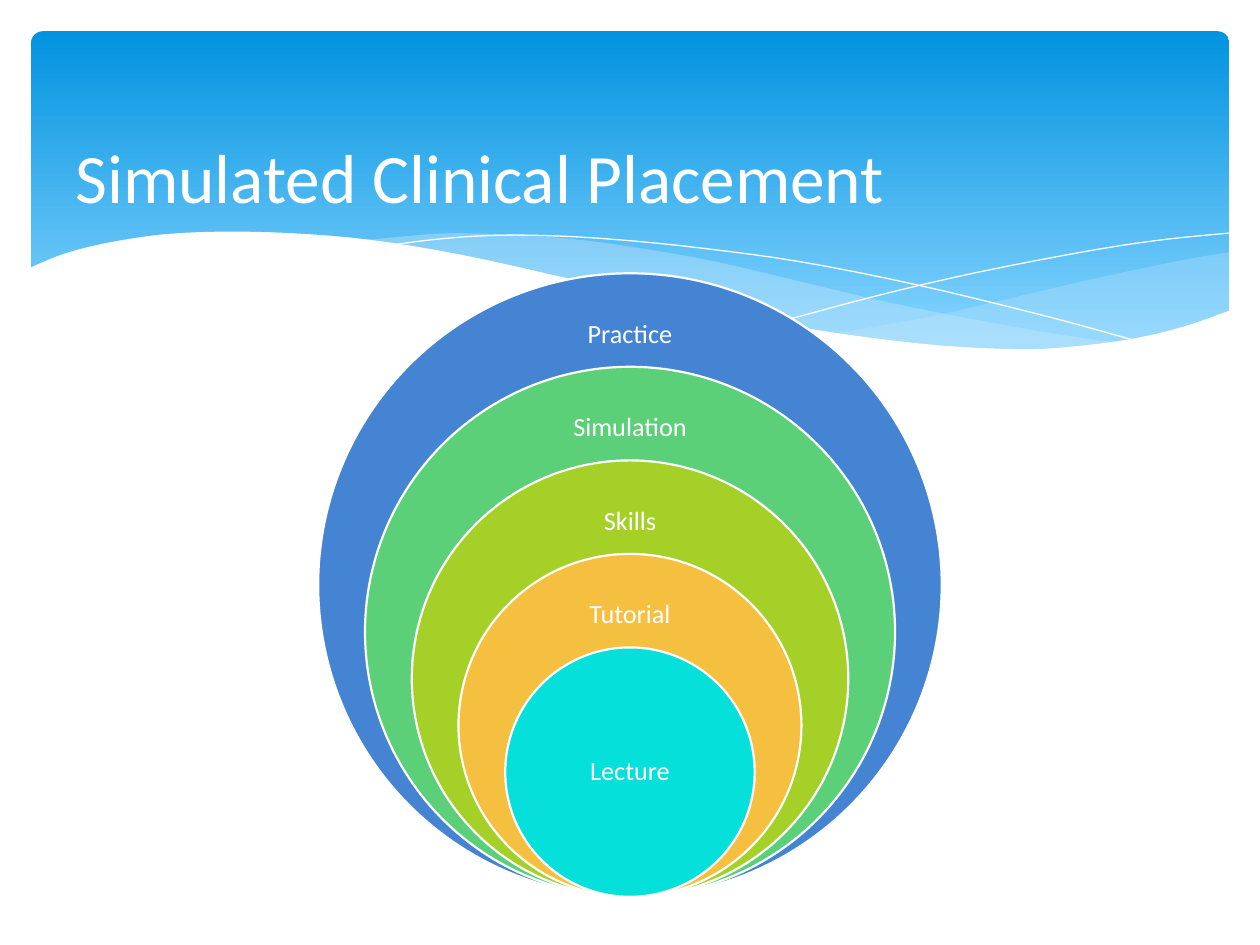
import pptx
import pptx.util
import pptx.dml.color
import pptx.enum.shapes
import pptx.enum.text
import pptx.oxml.ns
import lxml.etree

Cm = pptx.util.Cm
Pt = pptx.util.Pt
RGBColor = pptx.dml.color.RGBColor
Shapes = pptx.enum.shapes.MSO_SHAPE

WHITE = RGBColor(0xFF, 0xFF, 0xFF)
SKY_DARK = RGBColor(0x02, 0x93, 0xE0)
SKY_LIGHT = RGBColor(0x83, 0xD3, 0xFE)
MIST = RGBColor(0xC6, 0xE7, 0xFC)
BLUE = RGBColor(0x45, 0x84, 0xD3)
GREEN = RGBColor(0x5B, 0xD0, 0x78)
LIME = RGBColor(0xA5, 0xD0, 0x28)
AMBER = RGBColor(0xF5, 0xC0, 0x40)
TURQUOISE = RGBColor(0x05, 0xE0, 0xDB)

# Knots of the header waves, in centimetres
RIGHT_WAVE_TOP = [(24.79, 5.08), (23.75, 5.26), (21.87, 5.66), (19.79, 6.15),
                  (18.52, 6.43), (16.79, 6.73)]
RIGHT_WAVE_BOTTOM = [(16.79, 6.73), (18.26, 6.91), (19.53, 7.04), (20.68, 7.06),
                     (21.92, 6.98), (23.19, 6.78), (24.1, 6.53), (24.79, 6.27)]
LONG_WAVE_TOP = [(22.68, 6.93), (21.26, 6.73), (19.69, 6.45), (17.93, 6.1),
                 (15.98, 5.64), (14.45, 5.28), (13.06, 5.03), (11.81, 4.85),
                 (10.67, 4.75), (9.17, 4.7), (8.33, 4.75), (7.26, 4.85)]
LONG_WAVE_BOTTOM = [(7.26, 4.85), (8.69, 5.05), (10.26, 5.36), (12.47, 5.89),
                    (14.38, 6.3), (16.1, 6.63), (17.65, 6.86), (19, 7.01),
                    (20.22, 7.06), (21.54, 7.04), (22.68, 6.93)]
FALLING_LINE = [(7.85, 4.95), (8.74, 4.83), (9.83, 4.75), (11, 4.75), (12.42, 4.83),
                (14.12, 5), (16.15, 5.28), (18.47, 5.74), (21.11, 6.38), (23.04, 6.91)]
RISING_LINE = [(15.57, 6.53), (17.65, 5.97), (19.71, 5.49), (22, 5.05),
               (23.47, 4.83), (24.77, 4.7)]
PAGE_EDGE = [(24.82, 6.25), (23.88, 6.58), (22.83, 6.83), (21.59, 6.99), (20.55, 7.04),
             (18.9, 6.96), (16.97, 6.73), (14.71, 6.35), (12.78, 5.92), (11.35, 5.59),
             (9.27, 5.13), (7.42, 4.83), (5.84, 4.7), (4.5, 4.67), (3.35, 4.72),
             (2.41, 4.85), (1.7, 5), (1.17, 5.16), (0.58, 5.41)]
PAGE_CORNERS = [(0.58, 8.36), (24.82, 8.36)]

# Label, colour and label width of each ring, from the outside in
RINGS = [("Practice", BLUE, 4.72), ("Simulation", GREEN, 4.6), ("Skills", LIME, 4.55),
         ("Tutorial", AMBER, 3.73), ("Lecture", TURQUOISE, 3.56)]
CENTRE_X, RINGS_BOTTOM = 12.7, 18.08
OUTER_DIAMETER, RING_STEP = 12.57, 0.15
LABEL_OFFSET, LABEL_HEIGHT = 0.62, 1.24


def smooth(knots, steps=4):
    """Return points on a Catmull-Rom curve through the knots."""
    padded = [knots[0], *knots, knots[-1]]
    points = [knots[0]]
    for a, b, c, d in zip(padded, padded[1:], padded[2:], padded[3:]):
        for step in range(1, steps + 1):
            t = step / steps
            points.append(tuple(
                (2 * q + (r - p) * t + (2 * p - 5 * q + 4 * r - s) * t ** 2
                 + (3 * q - p - 3 * r + s) * t ** 3) / 2
                for p, q, r, s in zip(a, b, c, d)))
    return points


class SlideBuilder:
    font_name = "Calibri"
    title_size = Pt(39.6)
    label_size = Pt(15)
    label_inset = Cm(0.3)
    ring_line = Pt(1.25)

    def __init__(self, slide):
        self.slide = slide

    def style_font(self, paragraph, size):
        paragraph.font.name = self.font_name
        paragraph.font.size = size
        paragraph.font.color.rgb = WHITE

    def header(self, left, top, width, height):
        shape = self.slide.shapes.add_shape(
            Shapes.ROUNDED_RECTANGLE, Cm(left), Cm(top), Cm(width), Cm(height))
        shape.adjustments[0] = 0.034
        shape.shadow.inherit = False
        shape.line.fill.background()
        shape.fill.gradient()
        shape.fill.gradient_angle = 270
        stops = shape.fill.gradient_stops
        for stop, position, color in zip(stops, (0, 0.9), (SKY_DARK, SKY_LIGHT)):
            stop.position = position
            stop.color.rgb = color

    def outline(self, points, closed):
        start, *others = [(Cm(x), Cm(y)) for x, y in points]
        builder = self.slide.shapes.build_freeform(*start)
        builder.add_line_segments(others, close=closed)
        shape = builder.convert_to_shape()
        shape.shadow.inherit = False
        return shape

    def wave(self, points, color, opacity=100):
        shape = self.outline(points, closed=True)
        shape.line.fill.background()
        shape.fill.solid()
        shape.fill.fore_color.rgb = color
        if opacity < 100:
            color_element = shape.fill._xPr.find(".//" + pptx.oxml.ns.qn("a:srgbClr"))
            alpha = lxml.etree.SubElement(color_element, pptx.oxml.ns.qn("a:alpha"))
            alpha.set("val", str(opacity * 1000))

    def hairline(self, points):
        shape = self.outline(points, closed=False)
        shape.fill.background()
        shape.line.color.rgb = WHITE
        shape.line.width = Pt(0)

    def ring(self, left, top, diameter, color):
        shape = self.slide.shapes.add_shape(
            Shapes.OVAL, Cm(left), Cm(top), Cm(diameter), Cm(diameter))
        shape.shadow.inherit = False
        shape.fill.solid()
        shape.fill.fore_color.rgb = color
        shape.line.color.rgb = WHITE
        shape.line.width = self.ring_line

    def label(self, text, left, top, width, height):
        frame = self.slide.shapes.add_textbox(
            Cm(left), Cm(top), Cm(width), Cm(height)).text_frame
        frame.word_wrap = True
        frame.vertical_anchor = pptx.enum.text.MSO_ANCHOR.MIDDLE
        frame.margin_left = frame.margin_right = self.label_inset
        frame.margin_top = frame.margin_bottom = self.label_inset
        paragraph = frame.paragraphs[0]
        paragraph.text = text
        paragraph.alignment = pptx.enum.text.PP_ALIGN.CENTER
        paragraph.line_spacing = 0.9
        self.style_font(paragraph, self.label_size)

    def title(self, text, left, top, width, height):
        shape = self.slide.shapes.title
        shape.left, shape.top = Cm(left), Cm(top)
        shape.width, shape.height = Cm(width), Cm(height)
        frame = shape.text_frame
        frame.text = text
        frame.word_wrap = True
        frame.auto_size = pptx.enum.text.MSO_AUTO_SIZE.NONE
        frame.vertical_anchor = pptx.enum.text.MSO_ANCHOR.MIDDLE
        paragraph = frame.paragraphs[0]
        paragraph.alignment = pptx.enum.text.PP_ALIGN.LEFT
        self.style_font(paragraph, self.title_size)
        # Bring the title in front of the header
        self.slide.shapes._spTree.append(shape._element)


def main():
    presentation = pptx.Presentation()
    presentation.slide_width, presentation.slide_height = Cm(25.4), Cm(19.05)
    title_only = presentation.slide_layouts[5]
    builder = SlideBuilder(presentation.slides.add_slide(title_only))

    # Header with waves
    builder.header(0.63, 0.63, 24.15, 6.86)
    builder.wave(smooth(RIGHT_WAVE_TOP) + smooth(RIGHT_WAVE_BOTTOM), MIST, 29)
    builder.wave(smooth(LONG_WAVE_TOP) + smooth(LONG_WAVE_BOTTOM), MIST, 40)
    builder.hairline(smooth(FALLING_LINE))
    builder.hairline(smooth(RISING_LINE))
    builder.wave(smooth(PAGE_EDGE) + PAGE_CORNERS, WHITE)

    # Nested rings that share their lowest point
    for index, (text, color, label_width) in enumerate(RINGS):
        diameter = OUTER_DIAMETER * (1 - RING_STEP * index)
        top = RINGS_BOTTOM - diameter
        builder.ring(CENTRE_X - diameter / 2, top, diameter, color)
        innermost = index == len(RINGS) - 1
        label_height = diameter / 2 if innermost else LABEL_HEIGHT
        label_top = top + (diameter / 4 if innermost else LABEL_OFFSET)
        builder.label(text, CENTRE_X - label_width / 2, label_top,
                      label_width, label_height)

    # Title
    builder.title("Simulated Clinical Placement", 1.27, 2.36, 18.29, 2.36)

    presentation.save("out.pptx")


if __name__ == "__main__":
    main()
